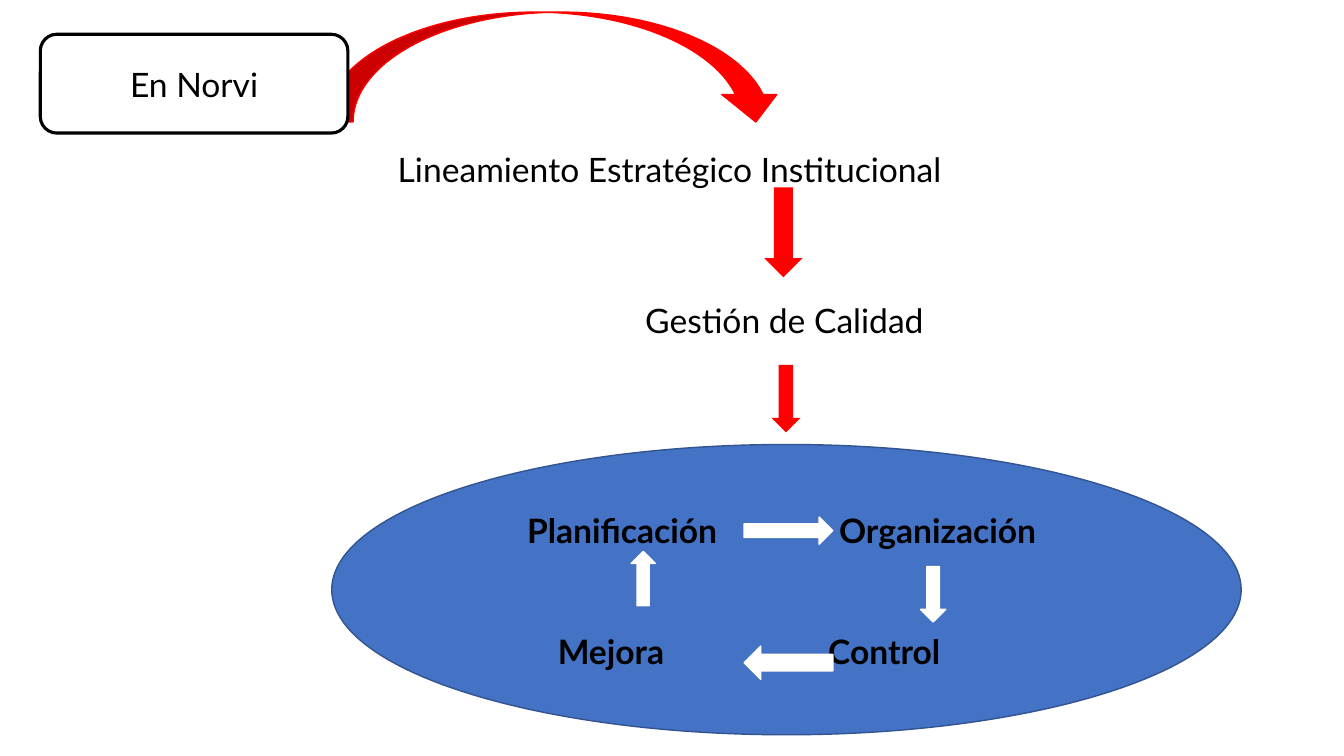
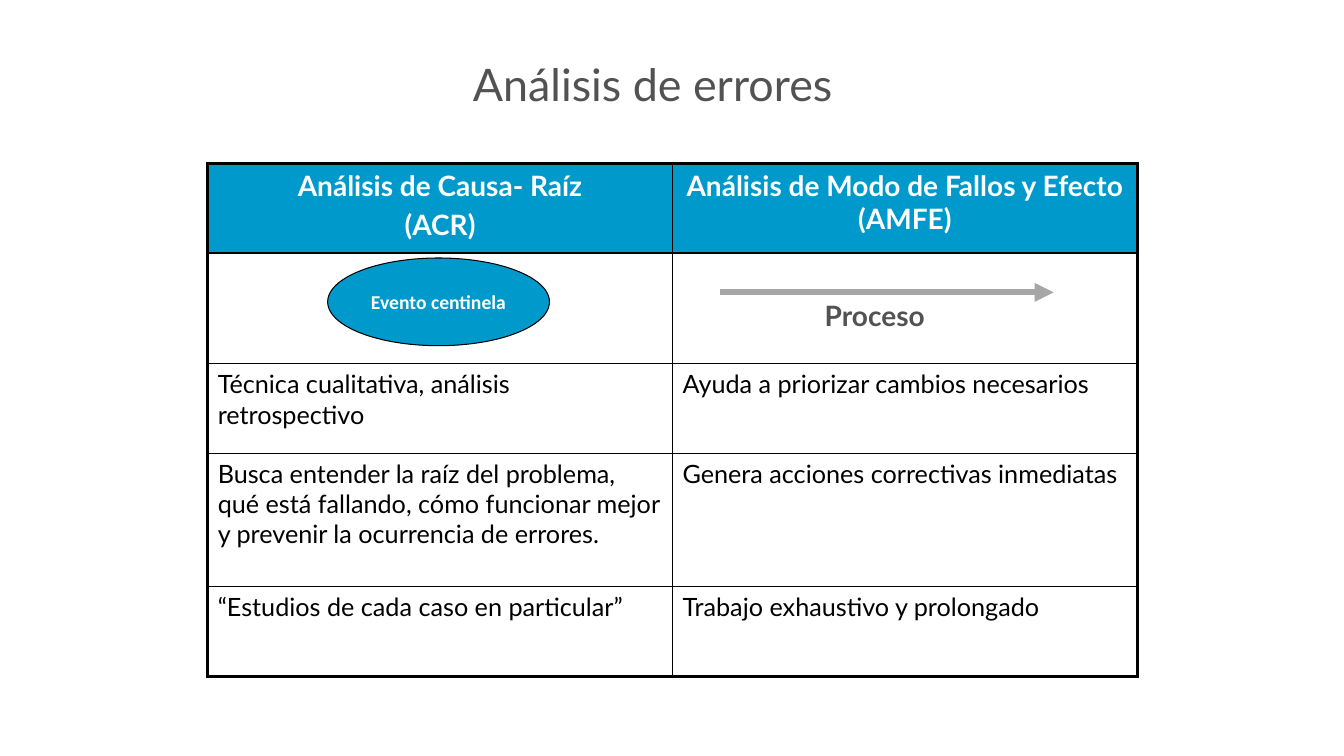
from lxml import etree
from pptx import Presentation
from pptx.dml.color import RGBColor
from pptx.enum.shapes import MSO_CONNECTOR, MSO_SHAPE
from pptx.enum.text import MSO_ANCHOR, MSO_AUTO_SIZE, PP_ALIGN
from pptx.oxml.ns import qn
from pptx.util import Pt

PX = 9144
FONT = "Lato"
BLACK, WHITE, RED = "000000", "FFFFFF", "FF0000"
BLUE, NAVY, CYAN = "4472C4", "325491", "0099CC"
DARK_GRAY, GRAY = "525252", "A6A6A6"
LEFT, CENTER = PP_ALIGN.LEFT, PP_ALIGN.CENTER
TOP, MIDDLE = MSO_ANCHOR.TOP, MSO_ANCHOR.MIDDLE
NO_AUTOFIT = MSO_AUTO_SIZE.NONE
STRAIGHT = MSO_CONNECTOR.STRAIGHT
OVAL, ROUNDED = MSO_SHAPE.OVAL, MSO_SHAPE.ROUNDED_RECTANGLE
DOWN, UP = MSO_SHAPE.DOWN_ARROW, MSO_SHAPE.UP_ARROW
LEFTWARD, RIGHTWARD = MSO_SHAPE.LEFT_ARROW, MSO_SHAPE.RIGHT_ARROW
CURVED_DOWN = MSO_SHAPE.CURVED_DOWN_ARROW
TITLE_ONLY, BLANK = 5, 6

LABELS = [
    ("Lineamiento Estratégico Institucional", 664, 168, False),
    ("Gestión de Calidad", 778, 318, False),
    ("Planificación", 617, 526, True),
    ("Organización", 930, 526, True),
    ("Mejora", 606, 646, True),
    ("Control", 877, 646, True),
]
ARROWS = [
    (DOWN, (758, 186, 38, 89), RED, None),
    (DOWN, (765, 362, 29, 67), RED, None),
    (RIGHTWARD, (738, 513, 88, 27), WHITE, WHITE),
    (DOWN, (913, 562, 25, 55), WHITE, WHITE),
    (LEFTWARD, (738, 641, 88, 33), WHITE, WHITE),
    (UP, (626, 547, 24, 54), WHITE, WHITE),
    (CURVED_DOWN, (323, 12, 454, 109), RED, RED),
]
HEADER = ["Análisis de Causa- Raíz\n(ACR)", "Análisis de Modo de Fallos y Efecto (AMFE)"]
BODY = [
    ["", "Proceso"],
    ["Técnica cualitativa, análisis retrospectivo", "Ayuda a priorizar cambios necesarios"],
    ["Busca entender la raíz del problema, qué está fallando, cómo funcionar mejor "
     "y prevenir la ocurrencia de errores.", "Genera acciones correctivas inmediatas"],
    ["“Estudios de cada caso en particular”", "Trabajo exhaustivo y prolongado"],
]
ROW_HEIGHTS = [89, 110, 89, 132, 89]
COLUMN_WIDTH = 461


def px(*lengths):
    """Turn lengths in px into EMU."""
    return [length * PX for length in lengths]


def color(value):
    """Turn a hex string into a colour."""
    return RGBColor.from_string(value)


def write(frame, text, size=24, ink=BLACK, bold=False, font=FONT, align=CENTER,
          anchor=MIDDLE, wrap=True, gap=0):
    """Fill a text frame, one paragraph for each line of text."""
    frame.word_wrap = wrap
    frame.vertical_anchor = anchor
    for index, line in enumerate(text.split("\n")):
        paragraph = frame.add_paragraph() if index else frame.paragraphs[0]
        paragraph.text = line
        paragraph.alignment = align
        paragraph.space_before = Pt(gap if index else 0)
        paragraph.font.size = Pt(size)
        paragraph.font.bold = bold
        paragraph.font.name = font
        paragraph.font.color.rgb = color(ink)


def add_shape(slide, kind, box, fill, line=None, width=1):
    """Add a filled preset shape."""
    shape = slide.shapes.add_shape(kind, *px(*box))
    shape.shadow.inherit = False
    shape.fill.solid()
    shape.fill.fore_color.rgb = color(fill)
    if line:
        shape.line.color.rgb = color(line)
        shape.line.width = Pt(width)
    else:
        shape.line.fill.background()
    return shape


def add_label(slide, text, center_x, center_y, bold):
    """Add a line of text centred on a point."""
    width, height = 600, 46
    box = (center_x - width // 2, center_y - height // 2, width, height)
    write(slide.shapes.add_textbox(*px(*box)).text_frame, text, bold=bold)


def add_arrow_line(slide, start, end, stroke, width):
    """Add a straight line with an arrowhead at its end."""
    connector = slide.shapes.add_connector(STRAIGHT, *px(*start, *end))
    connector.line.color.rgb = color(stroke)
    connector.line.width = Pt(width)
    etree.SubElement(connector.line._get_or_add_ln(), qn("a:tailEnd"), type="triangle")
    etree.SubElement(connector._element.spPr, qn("a:effectLst"))


def set_borders(cell, widths):
    """Draw the left, right, top and bottom borders of a cell in black."""
    properties = cell._tc.get_or_add_tcPr()
    for side, width in zip("LRTB", widths):
        line = etree.SubElement(properties, qn(f"a:ln{side}"), w=str(Pt(width)))
        fill = etree.SubElement(line, qn("a:solidFill"))
        etree.SubElement(fill, qn("a:srgbClr"), val=BLACK)


def add_comparison_table(slide, left, top):
    """Add the two-column table with a heavy outer frame."""
    rows = [HEADER] + BODY
    columns = len(HEADER)
    box = px(left, top, COLUMN_WIDTH * columns, sum(ROW_HEIGHTS))
    table = slide.shapes.add_table(len(rows), columns, *box).table
    table.first_row = table.horz_banding = False
    for column in table.columns:
        column.width = COLUMN_WIDTH * PX
    for r, texts in enumerate(rows):
        table.rows[r].height = ROW_HEIGHTS[r] * PX
        for c, text in enumerate(texts):
            cell = table.cell(r, c)
            outer = (c == 0, c == columns - 1, r == 0, r == len(rows) - 1)
            set_borders(cell, [2.25 if edge else 1 for edge in outer])
            cell.fill.solid()
            cell.fill.fore_color.rgb = color(WHITE if r else CYAN)
            style = {"size": 18, "align": LEFT}
            if r == 0:
                style = {"size": 20, "ink": WHITE, "bold": True, "gap": 4}
            elif text == "Proceso":
                style = {"size": 20, "ink": DARK_GRAY, "bold": True, "align": LEFT}
                cell.margin_left, cell.margin_top = px(151, 45)
            write(cell.text_frame, text, anchor=TOP, **style)


def add_title(slide, text, box):
    """Place and format the title placeholder."""
    title = slide.shapes.title
    title.left, title.top, title.width, title.height = px(*box)
    write(title.text_frame, text, size=32, ink=DARK_GRAY)
    title.text_frame.auto_size = NO_AUTOFIT


def build_strategy_slide(presentation):
    """Build the flow from the strategy to the quality cycle."""
    slide = presentation.slides.add_slide(presentation.slide_layouts[BLANK])
    add_shape(slide, OVAL, (329, 441, 902, 288), BLUE, NAVY)
    for label in LABELS:
        add_label(slide, *label)
    for arrow in ARROWS:
        add_shape(slide, *arrow)
    institution = add_shape(slide, ROUNDED, (40, 34, 305, 98), WHITE, BLACK, 2.25)
    write(institution.text_frame, "En Norvi")


def build_errors_slide(presentation):
    """Build the comparison of the two methods of error analysis."""
    slide = presentation.slides.add_slide(presentation.slide_layouts[TITLE_ONLY])
    add_title(slide, "Análisis de errores", (317, 51, 661, 64))
    add_comparison_table(slide, 206, 162)
    event = add_shape(slide, OVAL, (325, 256, 220, 87), CYAN, BLACK, 0.75)
    write(event.text_frame, "Evento centinela", size=14, ink=WHITE, bold=True,
          font="Calibri", wrap=False)
    add_arrow_line(slide, (714, 290), (1045, 290), GRAY, 4.5)


def main():
    """Build and save the presentation."""
    presentation = Presentation()
    presentation.slide_width, presentation.slide_height = px(1333, 750)
    build_strategy_slide(presentation)
    build_errors_slide(presentation)
    presentation.save("out.pptx")


if __name__ == "__main__":
    main()
